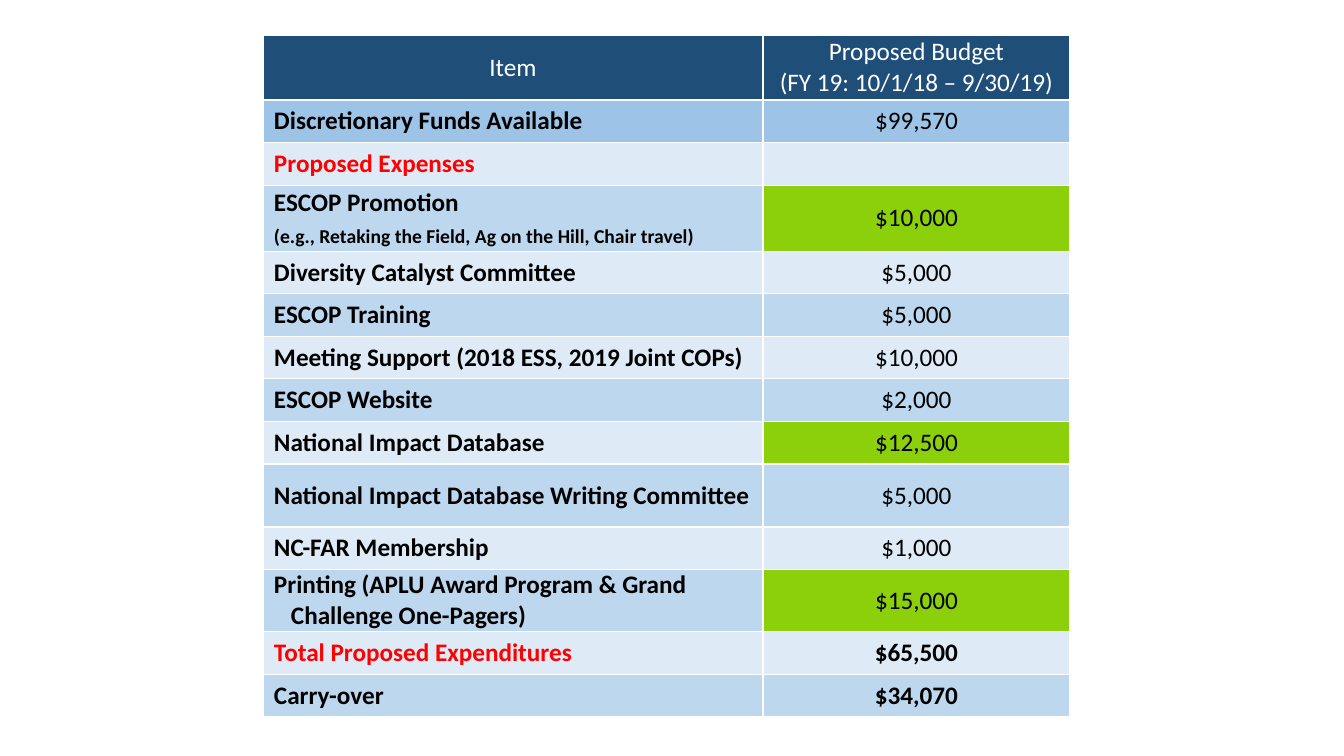
from dataclasses import dataclass

from lxml.etree import SubElement
from pptx import Presentation
from pptx.dml.color import RGBColor
from pptx.enum.text import MSO_ANCHOR, PP_ALIGN
from pptx.oxml.ns import qn
from pptx.util import Pt


@dataclass(frozen=True)
class Theme:
    font: str = "Calibri"
    size: int = 18
    note_size: int = 14
    header: str = "1F4E79"
    funds: str = "9DC3E6"
    bands: tuple = ("DEEBF7", "BDD7EE")
    highlight: str = "8BD00B"
    white: str = "FFFFFF"
    black: str = "000000"
    red: str = "FF0000"


THEME = Theme()

HEADER = (["Item"], ["Proposed Budget", "(FY 19: 10/1/18 – 9/30/19)"])
# item lines, amount
BUDGET = [
    (["Discretionary Funds Available"], "$99,570"),
    (["Proposed Expenses"], ""),
    (["ESCOP Promotion", "(e.g., Retaking the Field, Ag on the Hill, Chair travel)"], "$10,000"),
    (["Diversity Catalyst Committee"], "$5,000"),
    (["ESCOP Training"], "$5,000"),
    (["Meeting Support (2018 ESS, 2019 Joint COPs)"], "$10,000"),
    (["ESCOP Website"], "$2,000"),
    (["National Impact Database"], "$12,500"),
    (["National Impact Database Writing Committee"], "$5,000"),
    (["NC-FAR Membership"], "$1,000"),
    (["Printing (APLU Award Program & Grand", "Challenge One-Pagers)"], "$15,000"),
    (["Total Proposed Expenditures"], "$65,500"),
    (["Carry-over"], "$34,070"),
]
RED_ITEMS = {"Proposed Expenses", "Total Proposed Expenditures"}
HIGHLIGHTED = {"ESCOP Promotion", "National Impact Database",
               "Printing (APLU Award Program & Grand"}
BOLD_AMOUNTS = {"Total Proposed Expenditures", "Carry-over"}

SLIDE = (1344, 756)
LEFT, TOP, HEIGHT = 263, 35, 682
COLUMNS = (500, 307)
TALL_ROWS = {0: 65, 3: 66, 9: 63, 11: 62}
ITEM_INDENT, HANGING_INDENT = 11, 17


def px(n):
    return round(n * 914400 / 100.8)


def set_borders(cell):
    tc_pr = cell._tc.get_or_add_tcPr()
    for i, side in enumerate(("a:lnL", "a:lnR", "a:lnT", "a:lnB")):
        ln = SubElement(tc_pr, qn(side), w=str(Pt(1)))
        SubElement(SubElement(ln, qn("a:solidFill")), qn("a:srgbClr"), val=THEME.white)
        tc_pr.remove(ln)
        tc_pr.insert(i, ln)  # borders come before the fill


def fill_cell(cell, lines, fill, color, bold=False, align=PP_ALIGN.CENTER, indent=0):
    fmt = dict(margin_left=px(indent), margin_right=0, margin_top=0, margin_bottom=0,
               vertical_anchor=MSO_ANCHOR.MIDDLE)
    for name, value in fmt.items():
        setattr(cell, name, value)
    cell.fill.solid()
    cell.fill.fore_color.rgb = RGBColor.from_string(fill)
    set_borders(cell)
    tf = cell.text_frame
    for i, line in enumerate(lines):
        p = tf.paragraphs[0] if i == 0 else tf.add_paragraph()
        p.alignment = align
        if not line:
            continue
        r = p.add_run()
        r.text = line
        for name, value in dict(name=THEME.font, size=Pt(THEME.size), bold=bold).items():
            setattr(r.font, name, value)
        r.font.color.rgb = RGBColor.from_string(color)


def format_second_line(p):
    """Set a bracketed note smaller, and indent a continued item."""
    if p.text.startswith("("):
        p.runs[0].font.size = Pt(THEME.note_size)
        p.space_before = Pt(5)
    else:
        p._p.get_or_add_pPr().set("marL", str(px(HANGING_INDENT)))


def add_budget_table(slide):
    rows = len(BUDGET) + 1
    table = slide.shapes.add_table(rows, len(COLUMNS), px(LEFT), px(TOP),
                                   px(sum(COLUMNS)), px(HEIGHT)).table
    table.first_row = table.horz_banding = False
    for column, width in zip(table.columns, COLUMNS):
        column.width = px(width)
    plain = (HEIGHT - sum(TALL_ROWS.values())) / (rows - len(TALL_ROWS))
    for i, row in enumerate(table.rows):
        row.height = px(TALL_ROWS.get(i, plain))

    for col, lines in enumerate(HEADER):
        fill_cell(table.cell(0, col), lines, THEME.header, THEME.white)
    for i, (lines, amount) in enumerate(BUDGET, 1):
        item = lines[0]
        band = THEME.funds if i == 1 else THEME.bands[i % 2]
        item_cell, amount_cell = table.cell(i, 0), table.cell(i, 1)
        fill_cell(item_cell, lines, band, THEME.red if item in RED_ITEMS else THEME.black,
                  True, PP_ALIGN.LEFT, ITEM_INDENT)
        for p in item_cell.text_frame.paragraphs[1:]:
            format_second_line(p)
        fill_cell(amount_cell, [amount], THEME.highlight if item in HIGHLIGHTED else band,
                  THEME.black, item in BOLD_AMOUNTS)


def main():
    prs = Presentation()
    prs.slide_width, prs.slide_height = map(px, SLIDE)
    add_budget_table(prs.slides.add_slide(prs.slide_layouts[6]))
    prs.save("out.pptx")


if __name__ == "__main__":
    main()
